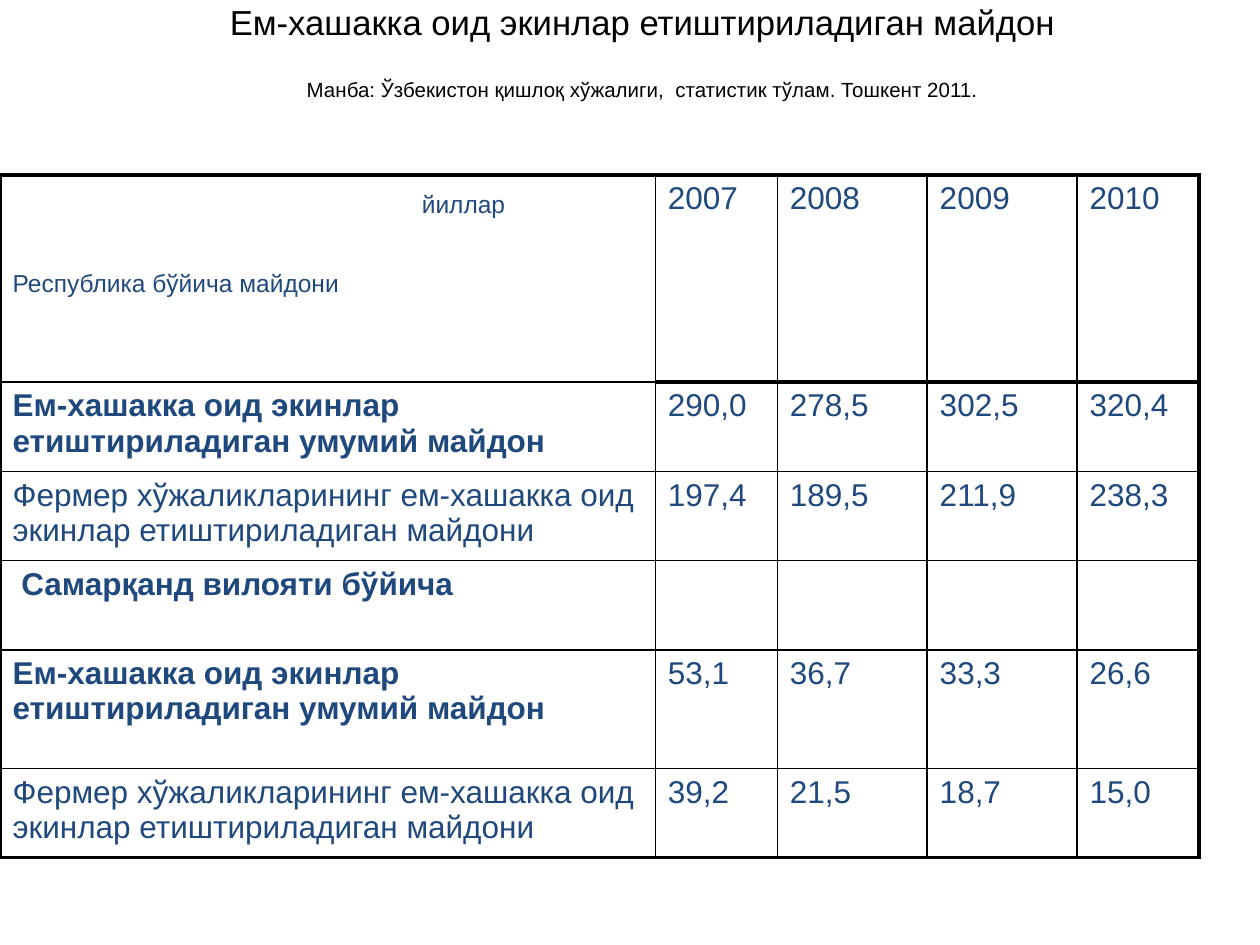
from pptx import Presentation
from pptx.dml.color import RGBColor
from pptx.enum.text import MSO_ANCHOR, MSO_AUTO_SIZE, PP_ALIGN
from pptx.oxml import parse_xml
from pptx.oxml.ns import nsdecls
from pptx.util import Cm, Pt

BLACK = RGBColor(0, 0, 0)
NAVY = RGBColor(0x1F, 0x49, 0x7D)
THIN, THICK = Pt(1), Pt(2.25)


def write(para, text, size=18, color=NAVY, bold=False, align=PP_ALIGN.LEFT, before=0, left=0):
    run = para.add_run()
    run.text = text
    run.font.name = "Arial"
    run.font.size = Pt(size)
    run.font.bold = bold
    run.font.color.rgb = color
    para.alignment = align
    para.space_before = Pt(before)
    if left:
        para._p.get_or_add_pPr().set("marL", str(left))


def edge(cell, side, width):
    cell._tc.get_or_add_tcPr().append(parse_xml(
        f'<a:ln{side} {nsdecls("a")} w="{width}"><a:solidFill>'
        f'<a:srgbClr val="{BLACK}"/></a:solidFill></a:ln{side}>'))


deck = Presentation()
deck.slide_width, deck.slide_height = Cm(25.4), Cm(19.05)
slide = deck.slides.add_slide(deck.slide_layouts[5])

title = slide.shapes.title
title.left, title.top, title.width, title.height = Cm(0.89), Cm(0.53), Cm(24.51), Cm(1)
frame = title.text_frame
frame.auto_size = MSO_AUTO_SIZE.NONE
frame.vertical_anchor = MSO_ANCHOR.MIDDLE
frame.margin_right = Cm(0.65)
frame.margin_top = frame.margin_bottom = 0
write(frame.paragraphs[0], "Ем-хашакка оид экинлар етиштириладиган майдон",
      size=19.8, color=BLACK, align=PP_ALIGN.CENTER)
write(frame.add_paragraph(), "Манба: Ўзбекистон қишлоқ хўжалиги,  статистик тўлам. Тошкент 2011.",
      size=11.7, color=BLACK, align=PP_ALIGN.CENTER, before=20)

total = "Ем-хашакка оид экинлар етиштириладиган умумий майдон"
farms = "Фермер хўжаликларининг ем-хашакка оид экинлар етиштириладиган майдони"
data = [
    ("", "2007", "2008", "2009", "2010"),
    (total, "290,0", "278,5", "302,5", "320,4"),
    (farms, "197,4", "189,5", "211,9", "238,3"),
    (" Самарқанд вилояти бўйича", "", "", "", ""),
    (total, "53,1", "36,7", "33,3", "26,6"),
    (farms, "39,2", "21,5", "18,7", "15,0"),
]
widths = [13.21, 2.46, 3.02, 3.02, 2.46]
heights = [4.17, 1.8, 1.8, 1.8, 2.39, 1.8]
last, end = len(heights) - 1, len(widths) - 1

table = slide.shapes.add_table(len(heights), len(widths), 0, Cm(3.53),
                               Cm(sum(widths)), Cm(sum(heights))).table
table.first_row = table.horz_banding = False
for col, width in zip(table.columns, widths):
    col.width = Cm(width)
for row, height in zip(table.rows, heights):
    row.height = Cm(height)

for r, line in enumerate(data):
    for c, text in enumerate(line):
        cell = table.cell(r, c)
        edge(cell, "L", THICK if c == 0 else THIN)
        edge(cell, "R", THICK if c == end else THIN)
        edge(cell, "T", THICK if r == 0 or (r == 1 and c) else THIN)
        edge(cell, "B", THICK if r == last or (r == 0 and c) else THIN)
        cell.fill.background()
        if text:
            write(cell.text_frame.paragraphs[0], text, bold=c == 0 and text != farms)

head = table.cell(0, 0)
head.margin_top = Cm(0.32)
write(head.text_frame.paragraphs[0], "йиллар", size=14, left=Cm(8.25))
write(head.text_frame.add_paragraph(), "Республика бўйича майдони", size=14, before=29.6)

deck.save("out.pptx")
